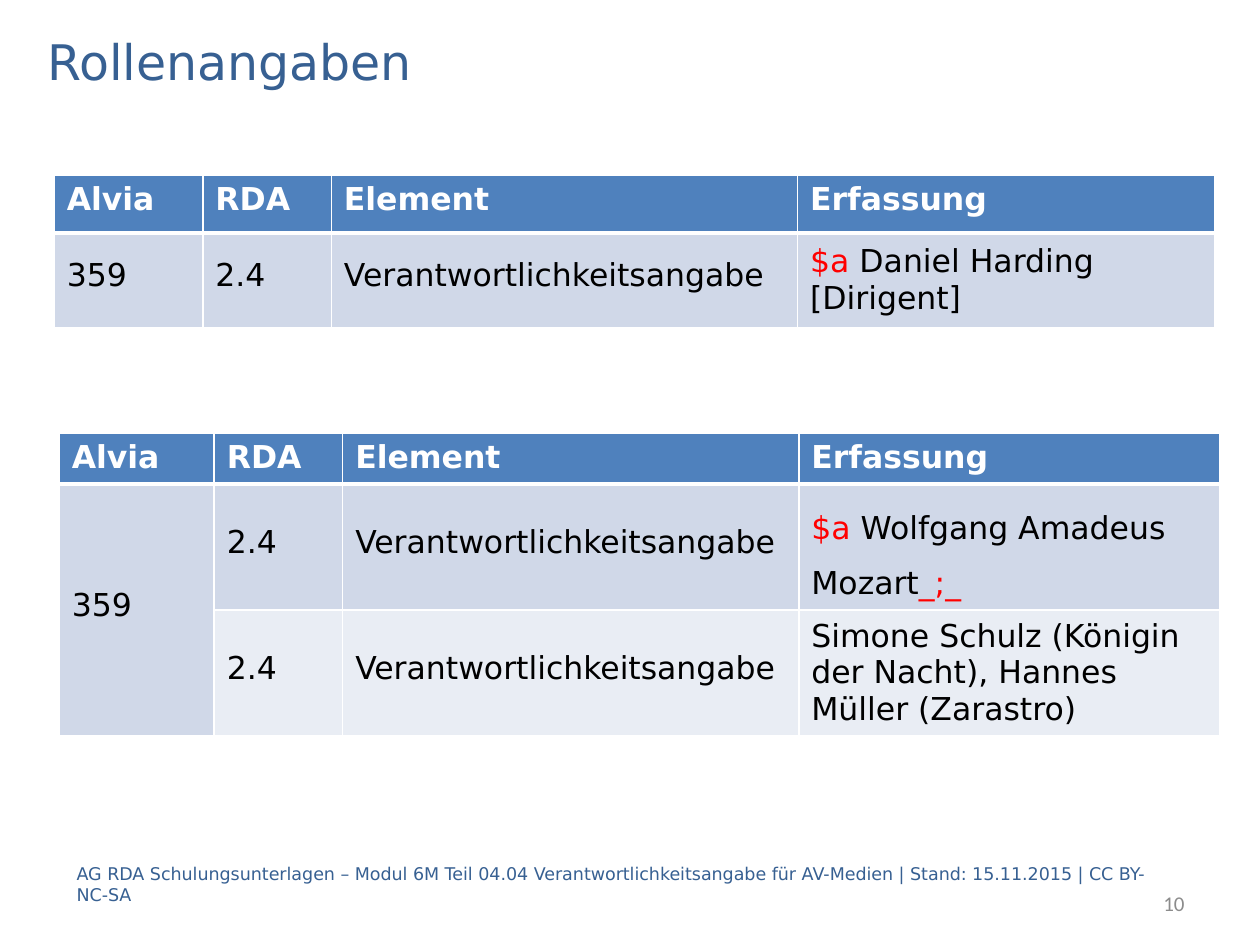
from lxml import etree
from pptx import Presentation
from pptx import util as u
from pptx.dml import color
from pptx.enum import text
from pptx.oxml import ns

SCALE = 9144
FONT = "DejaVu Sans"
BLUE, HEADER, BAND, PALE = "376092", "4F81BD", "D0D8E8", "E9EDF4"
WHITE, BLACK, RED, GREY = "FFFFFF", "000000", "FF0000", "8C8C8C"
HEADINGS = ["Alvia", "RDA", "Element", "Erfassung"]
FIXED = dict(line=u.Pt(16), before=6, after=6)


def px(length):
    """Turn a length in px into EMU."""
    return u.Emu(length * SCALE)


def rgb(value):
    """Turn a hex string into a colour."""
    return color.RGBColor.from_string(value)


def write(frame, parts, size=18, font=FONT, bold=False, align=None,
          line=None, before=None, after=None):
    """Fill a text frame with one paragraph of (text, colour) parts."""
    para = frame.paragraphs[0]
    para.alignment = align
    if line is not None:
        para.line_spacing = line
    if before is not None:
        para.space_before = u.Pt(before)
    if after is not None:
        para.space_after = u.Pt(after)
    for words, shade in parts:
        span = para.add_run()
        span.text = words
        span.font.size = u.Pt(size)
        span.font.name = font
        span.font.bold = bold
        span.font.color.rgb = rgb(shade)


def add_text(page, box, words, shade, **style):
    """Place a vertically centred text box."""
    frame = page.shapes.add_textbox(*map(px, box)).text_frame
    frame.word_wrap = True
    frame.vertical_anchor = text.MSO_ANCHOR.MIDDLE
    write(frame, [(words, shade)], **style)


def set_borders(cell, top, bottom):
    """Draw white cell borders, with top and bottom widths in points."""
    properties = cell._tc.get_or_add_tcPr()
    for side, width in zip("LRTB", (1, 1, top, bottom)):
        border = etree.SubElement(properties, ns.qn(f"a:ln{side}"), w=str(u.Pt(width)))
        fill = etree.SubElement(border, ns.qn("a:solidFill"))
        etree.SubElement(fill, ns.qn("a:srgbClr"), val=WHITE)


def add_table(page, left, top, widths, heights, entries):
    """Place a table with a heading row above (number, parts, style) entries."""
    box = (left, top, sum(widths), sum(heights))
    table = page.shapes.add_table(len(heights), len(widths), *map(px, box)).table
    table.horz_banding = False
    for column, width in zip(table.columns, widths):
        column.width = px(width)
    for row, height in zip(table.rows, heights):
        row.height = px(height)
    fills = [HEADER, BAND, PALE]
    for index, row in enumerate(table.rows):
        for cell in row.cells:
            set_borders(cell, 3 if index == 1 else 1, 3 if index == 0 else 1)
            cell.fill.solid()
            cell.fill.fore_color.rgb = rgb(fills[index])
            if index:
                cell.vertical_anchor = text.MSO_ANCHOR.MIDDLE
    for column, heading in enumerate(HEADINGS):
        write(table.cell(0, column).text_frame, [(heading, WHITE)], bold=True)
    for index, (parts, style) in enumerate(entries, 1):
        for column, words in enumerate(["359", "2.4", "Verantwortlichkeitsangabe"]):
            if column or index == 1:
                write(table.cell(index, column).text_frame, [(words, BLACK)], **FIXED)
        write(table.cell(index, 3).text_frame, parts, **style)
    if len(entries) > 1:
        table.cell(1, 0).merge(table.cell(len(entries), 0))


def build_page(page):
    """Place the title, both tables, the footer and the page number."""
    add_text(page, (28, 20, 945, 56), "Rollenangaben", BLUE, size=28)
    add_table(page, 43, 139, [118, 102, 370, 331], [46, 75], [
        ([("$a ", RED), ("Daniel Harding [Dirigent]", BLACK)], dict(before=6)),
    ])
    add_table(page, 47, 344, [123, 102, 362, 334], [38, 97, 97], [
        ([("$a", RED), (" Wolfgang Amadeus Mozart", BLACK), ("_;_", RED)],
         dict(line=1.5, before=6, after=6)),
        ([("Simone Schulz (Königin der Nacht), Hannes Müller (Zarastro)", BLACK)],
         dict(before=6, after=6)),
    ])
    add_text(page, (51, 682, 874, 40),
             "AG RDA Schulungsunterlagen – Modul 6M Teil 04.04 Verantwortlichkeitsangabe "
             "für AV-Medien | Stand: 15.11.2015 | CC BY-NC-SA", BLUE, size=10)
    add_text(page, (791, 697, 159, 40), "10", GREY, size=12, font="Calibri",
             align=text.PP_ALIGN.RIGHT)


def main():
    """Build and save the deck."""
    deck = Presentation()
    deck.slide_width, deck.slide_height = px(1000), px(750)
    build_page(deck.slides.add_slide(deck.slide_layouts[6]))
    deck.save("out.pptx")


if __name__ == "__main__":
    main()
